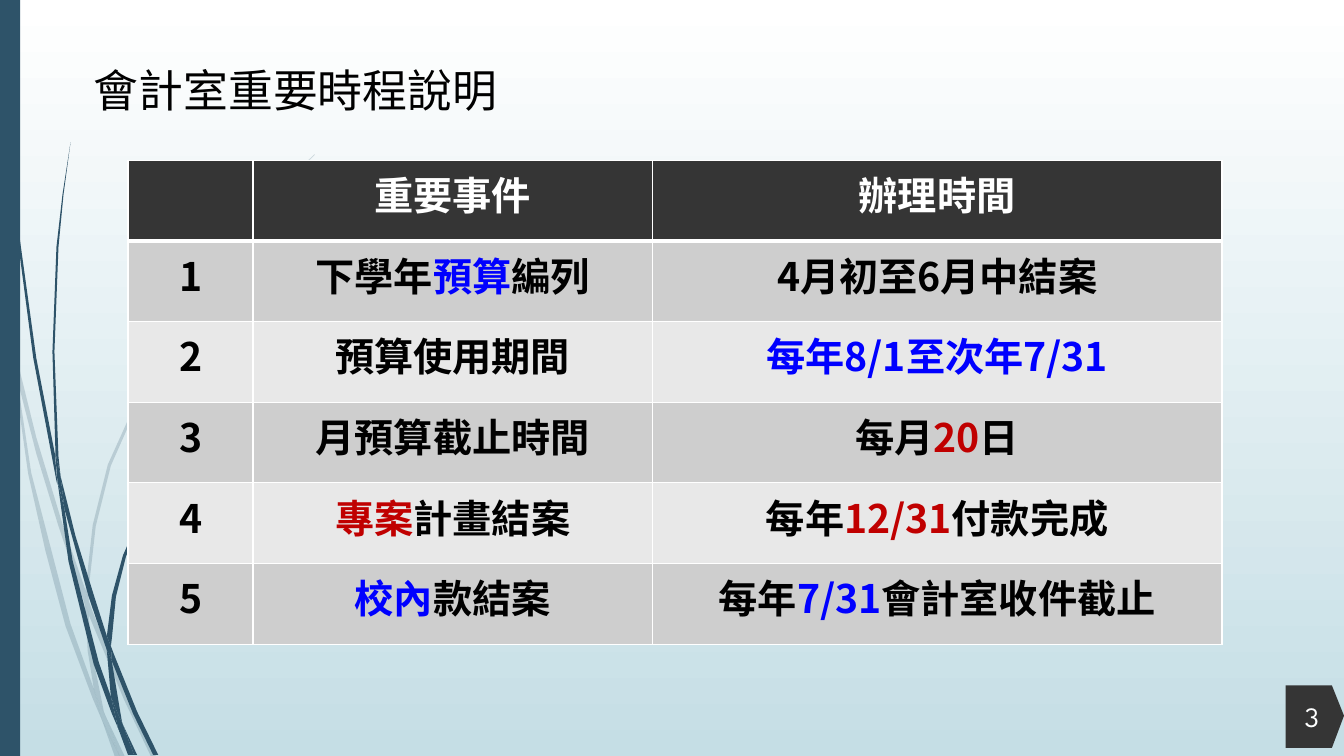
import pptx
import pptx.dml.color
import pptx.enum.shapes
import pptx.enum.text
import pptx.oxml
import pptx.oxml.ns
import pptx.util
from pptx.util import Inches

TITLE = "會計室重要時程說明"
PAGE_NUMBER = "3"
CJK, LATIN = "Noto Sans CJK SC", "League Spartan"
BLACK, WHITE, BLUE, RED = "000000", "FFFFFF", "0000FF", "C00000"
TEAL, CHARCOAL, SKY = "2E5369", "353535", "C5DEE5"
BANDS = ["CECECE", "E8E8E8"]

# Each cell is a list of (text, colour) spans.
HEADER = [[], [("重要事件", WHITE)], [("辦理時間", WHITE)]]
EVENTS = [
    ([("下學年", BLACK), ("預算", BLUE), ("編列", BLACK)],
     [("4月初至6月中結案", BLACK)]),
    ([("預算使用期間", BLACK)], [("每年8/1至次年7/31", BLUE)]),
    ([("月預算截止時間", BLACK)], [("每月", BLACK), ("20", RED), ("日", BLACK)]),
    ([("專案", RED), ("計畫結案", BLACK)],
     [("每年", BLACK), ("12/31", RED), ("付款完成", BLACK)]),
    ([("校內", BLUE), ("款結案", BLACK)],
     [("每年", BLACK), ("7/31", BLUE), ("會計室收件截止", BLACK)]),
]
COLUMN_WIDTHS = [1.24, 3.96, 5.65]
ROW_HEIGHT = 0.8

# Outlines of the grass blades, as corner points in inches.
PALE_BLADES = [
    [(0.58, 5.22), (0.84, 5.99), (0.85, 5.86), (0.62, 5.2), (0.36, 4.34), (0.14, 3.45),
     (0.17, 3.76), (0.36, 4.5)],
    [(0.92, 6.07), (0.88, 5.96), (0.88, 6.1), (1.23, 6.94), (1.5, 7.51), (1.55, 7.51),
     (1.27, 6.92)],
    [(1.19, 7.51), (1.24, 7.51), (1.05, 7.11)],
    [(0.93, 6.83), (0.7, 6.19), (0.31, 4.69), (0.17, 3.76), (0.11, 3.5), (0.28, 4.7),
     (0.45, 5.46), (0.65, 6.21), (0.92, 6.93), (1.01, 7.14), (0.99, 7.07)],
    [(0.84, 5.99), (0.87, 6.46), (0.93, 6.83), (0.96, 6.92), (1.05, 7.11), (1.03, 7.06),
     (0.91, 6.46), (0.88, 6.1), (0.88, 6.08)],
    [(0.88, 5.84), (0.95, 5.22), (1.1, 4.62), (1.6, 3.49), (2.29, 2.45), (2.68, 1.98),
     (2.9, 1.75), (3.12, 1.54), (3.12, 1.53), (2.89, 1.75), (2.68, 1.97), (2.28, 2.44),
     (1.58, 3.48), (1.07, 4.61), (0.92, 5.21), (0.85, 5.84), (0.85, 5.86), (0.88, 5.96)],
    [(1.01, 7.14), (1.14, 7.51), (1.19, 7.51)],
    [(0.88, 6.08), (0.88, 6.1), (0.88, 5.96), (0.85, 5.86), (0.84, 5.99)],
    [(0.96, 6.92), (0.93, 6.83), (0.99, 7.07), (1.01, 7.14), (1.19, 7.51), (1.05, 7.11)],
]
DARK_BLADES = [
    [(0.07, 1.1), (0.17, 2.33), (0.33, 3.55), (0.56, 4.77), (0.57, 4.81), (0.55, 4.57),
     (0.55, 4.53), (0.36, 3.55), (0.19, 2.32), (0.08, 1.09), (0.05, 0.48), (0.04, 0),
     (0.03, 0), (0.04, 0.48)],
    [(0.88, 5.92), (1.06, 6.45), (1.06, 6.33), (1.06, 6.31), (0.93, 5.9), (0.75, 5.32),
     (0.6, 4.72), (0.64, 5.05)],
    [(1.13, 6.49), (1.1, 6.41), (1.11, 6.56), (1.32, 7.08), (1.52, 7.49), (1.57, 7.49),
     (1.36, 7.06)],
    [(1.1, 6.91), (0.98, 6.57), (0.72, 5.56), (0.64, 5.05), (0.57, 4.77), (0.68, 5.57),
     (0.93, 6.59), (1.11, 7.08), (1.17, 7.22), (1.16, 7.17)],
    [(0.6, 4.72), (0.58, 4.53), (0.54, 3.49), (0.58, 2.45), (0.63, 1.93), (0.7, 1.41),
     (0.62, 1.93), (0.56, 2.45), (0.52, 3.49), (0.55, 4.49)],
    [(1.33, 7.49), (1.36, 7.49), (1.22, 7.19)],
    [(0.57, 4.77), (0.64, 5.05), (0.6, 4.72), (0.55, 4.49), (0.55, 4.53)],
    [(1.11, 6.33), (1.15, 5.92), (1.25, 5.52), (1.58, 4.76), (2.05, 4.06), (2.31, 3.74),
     (2.45, 3.59), (2.61, 3.44), (2.6, 3.44), (2.45, 3.58), (2.31, 3.73), (2.04, 4.05),
     (1.56, 4.74), (1.22, 5.51), (1.11, 5.91), (1.06, 6.31), (1.1, 6.41)],
    [(1.17, 7.22), (1.27, 7.49), (1.31, 7.49)],
    [(1.06, 6.45), (1.1, 6.91), (1.16, 7.06), (1.22, 7.19), (1.21, 7.16), (1.11, 6.56),
     (1.09, 6.51)],
    [(1.06, 6.45), (1.09, 6.51), (1.11, 6.56), (1.1, 6.41), (1.06, 6.31)],
    [(1.16, 7.06), (1.1, 6.91), (1.16, 7.17), (1.17, 7.22), (1.3, 7.49), (1.33, 7.49),
     (1.22, 7.19)],
]
BADGE = [(12.75, 6.8), (13.21, 6.8), (13.33, 7.1), (13.21, 7.42), (12.75, 7.42)]


def colour(hex_string):
    return pptx.dml.color.RGBColor.from_string(hex_string)


def paint(shape, fill, opacity=None):
    """Give a shape a plain fill with no line or shadow."""
    shape.shadow.inherit = False
    shape.fill.solid()
    shape.fill.fore_color.rgb = colour(fill)
    shape.line.fill.background()
    if opacity is not None:
        tint = shape.fill._xPr.find(".//" + pptx.oxml.ns.qn("a:srgbClr"))
        alpha = pptx.oxml.ns.qn("a:alpha")
        tint.append(tint.makeelement(alpha, {"val": str(opacity * 1000)}))


def draw_outline(shapes, points, fill, opacity=None):
    corners = [(Inches(x), Inches(y)) for x, y in points]
    builder = shapes.build_freeform(*corners[0], scale=1.0)
    builder.add_line_segments(corners[1:], close=True)
    paint(builder.convert_to_shape(), fill, opacity)


def write(frame, spans, size, font=CJK, bold=False, align="LEFT", anchor="TOP"):
    """Fill a text frame with one paragraph of (text, colour) spans."""
    frame.word_wrap = True
    frame.vertical_anchor = getattr(pptx.enum.text.MSO_ANCHOR, anchor)
    para = frame.paragraphs[0]
    para.alignment = getattr(pptx.enum.text.PP_ALIGN, align)
    para.font.size = pptx.util.Pt(size)
    for text, hue in spans:
        span = para.add_run()
        span.text = text
        span.font.size = pptx.util.Pt(size)
        span.font.name = font
        span.font.bold = bold
        span.font.color.rgb = colour(hue)
        latin = span.font._element.find(pptx.oxml.ns.qn("a:latin"))
        latin.addnext(latin.makeelement(pptx.oxml.ns.qn("a:ea"), {"typeface": font}))


def set_borders(cell, bottom=1, top=1):
    """Draw white borders round a cell, placed ahead of its fill."""
    properties = cell._tc.get_or_add_tcPr()
    widths = {"L": 1, "R": 1, "T": top, "B": bottom}
    for index, (side, width) in enumerate(widths.items()):
        properties.insert(index, pptx.oxml.parse_xml(
            f'<a:ln{side} {pptx.oxml.ns.nsdecls("a")} w="{width * 12700}">'
            f'<a:solidFill><a:srgbClr val="{WHITE}"/></a:solidFill></a:ln{side}>'))


def add_schedule(page):
    rows = [HEADER] + [([(str(number), BLACK)], *event)
                       for number, event in enumerate(EVENTS, 1)]
    table = page.shapes.add_table(
        len(rows), len(COLUMN_WIDTHS), Inches(1.27), Inches(1.59),
        Inches(sum(COLUMN_WIDTHS)), Inches(ROW_HEIGHT * len(rows))).table
    for column, width in zip(table.columns, COLUMN_WIDTHS):
        column.width = Inches(width)
    for r, row in enumerate(rows):
        for c, spans in enumerate(row):
            cell = table.cell(r, c)
            cell.fill.solid()
            cell.fill.fore_color.rgb = colour(BANDS[(r - 1) % 2] if r else CHARCOAL)
            set_borders(cell, bottom=1 if r else 3, top=3 if r == 1 else 1)
            write(cell.text_frame, spans, 28, bold=True, align="CENTER")


def main():
    deck = pptx.Presentation()
    deck.slide_width, deck.slide_height = Inches(13.33), Inches(7.5)
    page = deck.slides.add_slide(deck.slide_layouts[5])

    backdrop = page.background.fill
    backdrop.gradient()
    backdrop.gradient_angle = 270
    for stop, hue, position in zip(backdrop.gradient_stops, (WHITE, SKY), (0, 1)):
        stop.color.rgb = colour(hue)
        stop.position = position

    for blades, opacity in ((PALE_BLADES, 20), (DARK_BLADES, None)):
        clump = page.shapes.add_group_shape()
        for blade in blades:
            draw_outline(clump.shapes, blade, TEAL, opacity)
    side_bar = page.shapes.add_shape(
        pptx.enum.shapes.MSO_SHAPE.RECTANGLE, 0, 0, Inches(0.2), deck.slide_height)
    paint(side_bar, TEAL)
    draw_outline(page.shapes, BADGE, CHARCOAL)

    title = page.shapes.title
    title.left, title.top = Inches(0.83), Inches(0.57)
    title.width, title.height = Inches(9), Inches(0.64)
    write(title.text_frame, [(TITLE, BLACK)], 32)
    title.text_frame.auto_size = pptx.enum.text.MSO_AUTO_SIZE.SHAPE_TO_FIT_TEXT

    add_schedule(page)
    number_box = page.shapes.add_textbox(
        Inches(12.33), Inches(6.91), Inches(0.85), Inches(0.4))
    write(number_box.text_frame, [(PAGE_NUMBER, "FEFFFF")], 20, font=LATIN,
          align="RIGHT", anchor="MIDDLE")
    deck.save("out.pptx")


if __name__ == "__main__":
    main()
